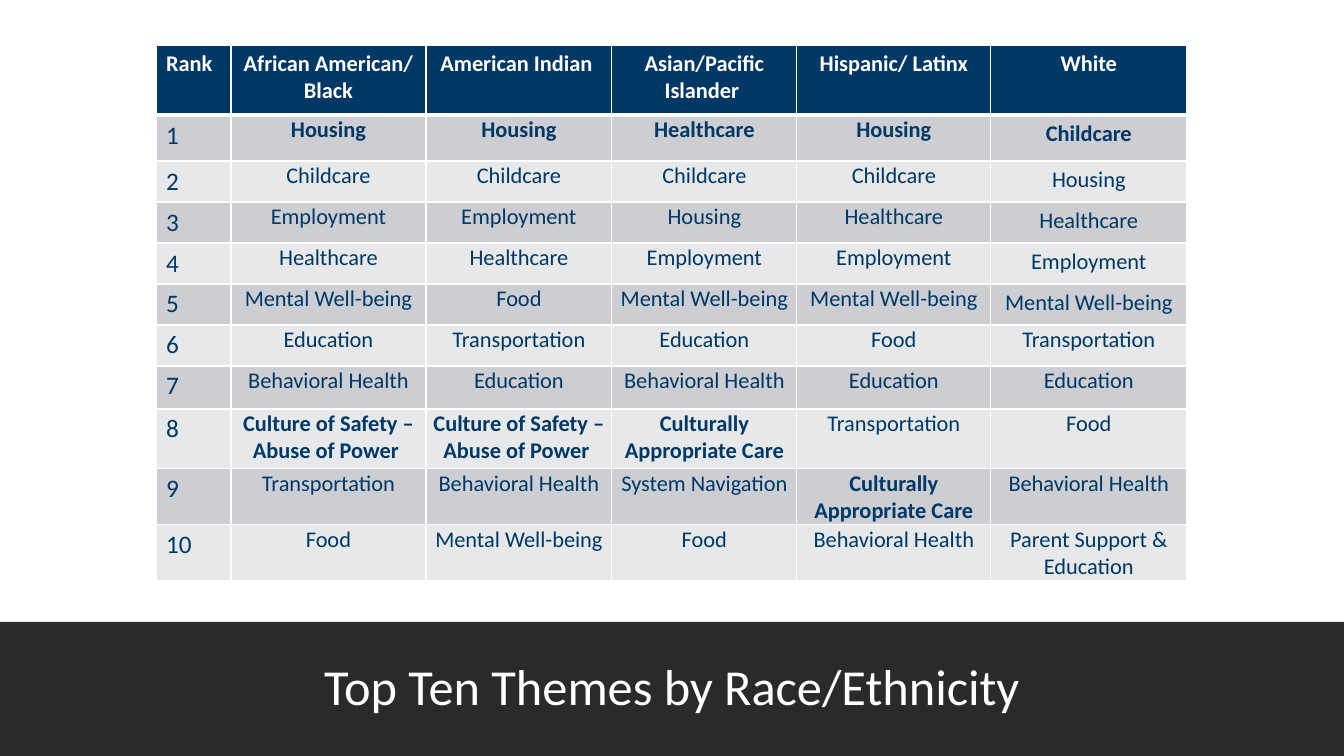
import lxml.etree
import pptx
import pptx.dml.color
import pptx.enum.text
import pptx.oxml.ns
import pptx.util

# Content
TITLE = "Top Ten Themes by Race/Ethnicity"
HEADERS = ["Rank", "African American/ Black", "American Indian ",
           "Asian/Pacific Islander ", "Hispanic/ Latinx", "White"]
SAFETY = "Culture of Safety – Abuse of Power "
CARE = "Culturally Appropriate Care"
THEMES = [
    ["Housing", "Housing", "Healthcare", "Housing", "Childcare"],
    ["Childcare", "Childcare", "Childcare", "Childcare", "Housing"],
    ["Employment", "Employment", "Housing", "Healthcare", "Healthcare"],
    ["Healthcare", "Healthcare", "Employment", "Employment", "Employment"],
    ["Mental Well-being", "Food", "Mental Well-being", "Mental Well-being", "Mental Well-being"],
    ["Education", "Transportation", "Education", "Food", "Transportation"],
    ["Behavioral Health", "Education", "Behavioral Health", "Education", "Education"],
    [SAFETY, SAFETY, CARE, "Transportation", "Food"],
    ["Transportation", "Behavioral Health", "System Navigation", CARE, "Behavioral Health"],
    ["Food", "Mental Well-being", "Food", "Behavioral Health", "Parent Support & Education"],
]

# Layout in px
SLIDE_WIDTH, SLIDE_HEIGHT = 1344, 756
BAND_TOP = 622
TABLE_LEFT, TABLE_TOP = 156, 45
COLUMN_WIDTHS = [75, 195, 186, 185, 194, 196]
ROW_HEIGHTS = [70, 46, 41, 41, 41, 41, 41, 43, 60, 56, 56]
ROOMY_ROWS = 5  # the last column keeps wide margins down to this rank

# Style
FONT = "Calibri"
WHITE = pptx.dml.color.RGBColor(0xFF, 0xFF, 0xFF)
NAVY = pptx.dml.color.RGBColor(0x00, 0x38, 0x65)
CHARCOAL = pptx.dml.color.RGBColor(0x0D, 0x0D, 0x0D)
BANDS = [pptx.dml.color.RGBColor(0xE7, 0xE8, 0xEA), pptx.dml.color.RGBColor(0xCC, 0xCE, 0xD3)]
CENTER = pptx.enum.text.PP_ALIGN.CENTER
LEFT = pptx.enum.text.PP_ALIGN.LEFT


def px(length):
    return pptx.util.Emu(round(length * 914400 / 100.8))


def add_child(parent, tag, **attributes):
    return lxml.etree.SubElement(parent, pptx.oxml.ns.qn(tag), attributes)


def write(frame, text, size=16, color=NAVY, bold=False, align=CENTER, spacing=1.0):
    para = frame.paragraphs[0]
    para.alignment = align
    para.line_spacing = spacing
    span = para.add_run()
    span.text = text
    span.font.name = FONT
    span.font.size = pptx.util.Pt(size)
    span.font.bold = bold
    span.font.color.rgb = color


def add_borders(cell, **points):
    properties = cell._tc.get_or_add_tcPr()
    for side in "LRTB":
        width = pptx.util.Pt(points.get(side, 1))
        line = add_child(properties, f"a:ln{side}", w=str(width))
        add_child(add_child(line, "a:solidFill"), "a:srgbClr", val=str(WHITE))


def main():
    deck = pptx.Presentation()
    deck.slide_width, deck.slide_height = px(SLIDE_WIDTH), px(SLIDE_HEIGHT)
    page = deck.slides.add_slide(deck.slide_layouts[5])

    # Title band
    title = page.shapes.title
    title.left, title.top = 0, px(BAND_TOP)
    title.width, title.height = px(SLIDE_WIDTH), px(SLIDE_HEIGHT - BAND_TOP)
    title.fill.solid()
    title.fill.fore_color.rgb = CHARCOAL
    tint = title._element.spPr.find(".//" + pptx.oxml.ns.qn("a:srgbClr"))
    add_child(tint, "a:alpha", val="88000")
    frame = title.text_frame
    frame.word_wrap = True
    frame.auto_size = pptx.enum.text.MSO_AUTO_SIZE.NONE
    frame.vertical_anchor = pptx.enum.text.MSO_ANCHOR.MIDDLE
    write(frame, TITLE, size=36, color=WHITE, spacing=0.9)

    # Table grid
    rows = [HEADERS] + [[str(rank), *themes] for rank, themes in enumerate(THEMES, 1)]
    table = page.shapes.add_table(
        len(rows), len(HEADERS), px(TABLE_LEFT), px(TABLE_TOP),
        px(sum(COLUMN_WIDTHS)), px(sum(ROW_HEIGHTS))).table
    for column, width in zip(table.columns, COLUMN_WIDTHS):
        column.width = px(width)
    for row, height in zip(table.rows, ROW_HEIGHTS):
        row.height = px(height)

    # Table cells
    last = len(HEADERS) - 1
    for rank, texts in enumerate(rows):
        for position, text in enumerate(texts):
            cell = table.cell(rank, position)
            header, rank_column = rank == 0, position == 0
            add_borders(cell, T=3 if rank == 1 else 1, B=3 if header else 1)
            cell.fill.solid()
            cell.fill.fore_color.rgb = NAVY if header else BANDS[rank % 2]
            roomy = header or rank_column or (position == last and rank <= ROOMY_ROWS)
            if not roomy:
                cell.margin_left = cell.margin_top = cell.margin_right = px(1)
                cell.margin_bottom = 0
            highlighted = not rank_column and (rank == 1 or text in (SAFETY, CARE))
            write(cell.text_frame, text,
                  size=18 if rank_column and not header else 16,
                  color=WHITE if header else NAVY,
                  bold=header or highlighted,
                  align=LEFT if rank_column else CENTER)

    deck.save("out.pptx")


if __name__ == "__main__":
    main()
